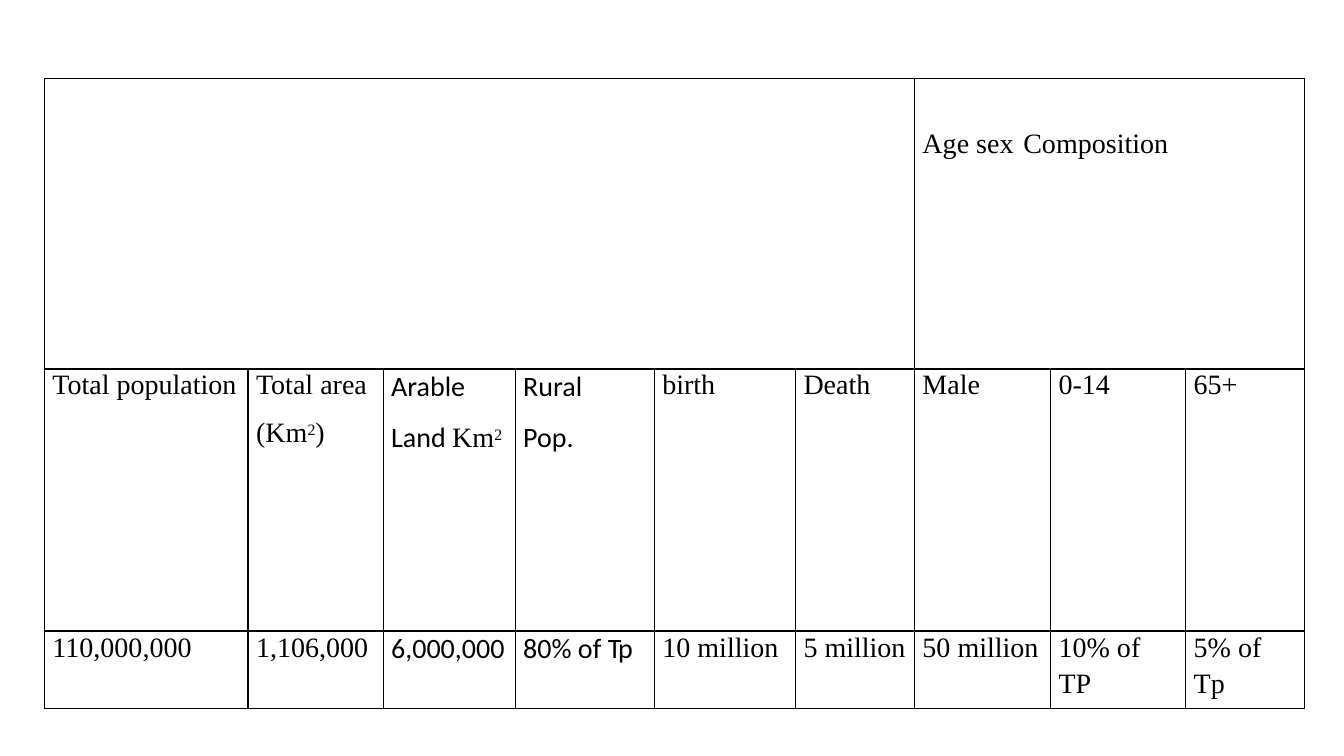
from lxml.etree import SubElement
from pptx import Presentation
from pptx.dml.color import RGBColor
from pptx.oxml import parse_xml
from pptx.oxml.ns import nsdecls, qn
from pptx.util import Inches, Pt

BLACK = RGBColor(0, 0, 0)
SERIF, SANS = "Times New Roman", "Calibri"
SANS_COLUMNS = (2, 3)

COLUMN_WIDTHS = [2.02, 1.34, 1.31, 1.38, 1.4, 1.18, 1.35, 1.34, 1.18]
ROW_HEIGHTS = [2.88, 2.6, 0.77]
GROUP_COLUMN = 6

# Each cell is a list of paragraphs; "|" separates runs
HEADINGS = [["Total population"], ["Total area", "(Km|2|)"], ["Arable", "Land |Km|2"],
            ["Rural", "Pop."], ["birth"], ["Death"], ["Male"], ["0-14"], ["65+"]]
VALUES = [["110,000,000"], ["1,106,000"], ["6,000,000"], ["80% of |Tp"], ["10 million"],
          ["5 million"], ["50 million"], ["10% of", "TP"], ["5% of", "Tp"]]


def fill_cell(cell, paragraphs, font_name, gap, top=0.01):
    cell.margin_left = cell.margin_right = cell.margin_bottom = 0
    cell.margin_top = Inches(top)
    for number, text in enumerate(paragraphs):
        frame = cell.text_frame
        paragraph = frame.add_paragraph() if number else frame.paragraphs[0]
        paragraph.space_before = Pt(gap if number else 0.8)
        properties = paragraph._p.get_or_add_pPr()
        properties.set("marL", str(Inches(0.08)))
        properties.set("indent", "0")
        for part in text.split("|"):
            run = paragraph.add_run()
            run.text = part
            run.font.name = SERIF if part in ("Km", "2") else font_name
            run.font.size = Pt(19.5 if part == "2" else 20)
            run.font.color.rgb = BLACK
            if part == "2":
                run.font._element.set("baseline", "26000")
            elif part == "Tp" and font_name == SANS:
                run.font._element.set("spc", "-120")


presentation = Presentation()
presentation.slide_width, presentation.slide_height = Inches(13.33), Inches(7.5)
slide = presentation.slides.add_slide(presentation.slide_layouts[6])

# Table grid
table = slide.shapes.add_table(
    len(ROW_HEIGHTS), len(COLUMN_WIDTHS), Inches(0.44), Inches(0.78),
    Inches(sum(COLUMN_WIDTHS)), Inches(sum(ROW_HEIGHTS))).table
table.first_row = table.horz_banding = False
for column, width in zip(table.columns, COLUMN_WIDTHS):
    column.width = Inches(width)
for row, height in zip(table.rows, ROW_HEIGHTS):
    row.height = Inches(height)

# Plain cells with thin black borders
for cell in table.iter_cells():
    cell.fill.background()
    cell_properties = cell._tc.get_or_add_tcPr()
    for position, side in enumerate(("lnL", "lnR", "lnT", "lnB")):
        cell_properties.insert(position, parse_xml(
            f'<a:{side} {nsdecls("a")} w="{Pt(1)}"><a:solidFill>'
            f'<a:srgbClr val="{BLACK}"/></a:solidFill></a:{side}>'))

# Group heading row
table.cell(0, 0).merge(table.cell(0, GROUP_COLUMN - 1))
group = table.cell(0, GROUP_COLUMN)
group.merge(table.cell(0, len(COLUMN_WIDTHS) - 1))
fill_cell(group, ["Age sex\tComposition"], SERIF, 0, top=0.49)
tabs = SubElement(group.text_frame.paragraphs[0]._p.get_or_add_pPr(), qn("a:tabLst"))
SubElement(tabs, qn("a:tab"), pos=str(Inches(1.19)), algn="l")

# Column headings and values
for row_number, (texts, gap) in enumerate([(HEADINGS, 11.6), (VALUES, 3.6)], start=1):
    for column_number, paragraphs in enumerate(texts):
        font_name = SANS if column_number in SANS_COLUMNS else SERIF
        fill_cell(table.cell(row_number, column_number), paragraphs, font_name, gap)

presentation.save("out.pptx")
